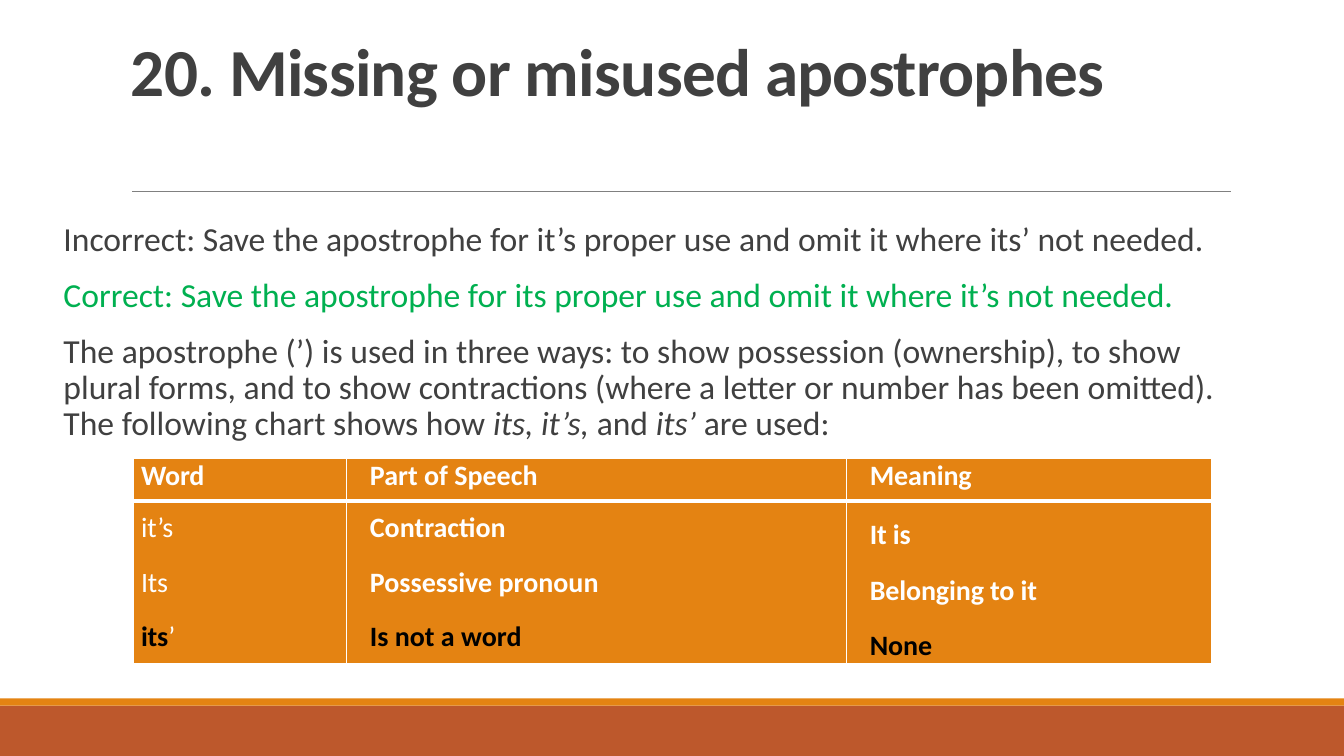
from lxml import etree
from pptx import Presentation
from pptx.dml.color import RGBColor
from pptx.enum.shapes import MSO_CONNECTOR, MSO_SHAPE
from pptx.enum.text import MSO_ANCHOR
from pptx.oxml.ns import qn
from pptx.util import Pt

RECT, STRAIGHT, TOP = MSO_SHAPE.RECTANGLE, MSO_CONNECTOR.STRAIGHT, MSO_ANCHOR.TOP
GREY, GREEN, WHITE, BLACK = "404040", "00B050", "FFFFFF", "000000"
ORANGE, RUST, RULE = "E48312", "BD582C", "808080"
W, H = 960, 540

TITLE = "20. Missing or misused apostrophes"
BODY = [
    [("Incorrect: Save the apostrophe for it’s proper use and omit it where its’ not needed.", GREY, False)],
    [("Correct: Save the apostrophe for its proper use and omit it where it’s not needed.", GREEN, False)],
    [("The apostrophe (’) is used in three ways: to show possession (ownership), to show plural forms, "
      "and to show contractions (where a letter or number has been omitted). "
      "The following chart shows how ", GREY, False),
     ("its, it’s, ", GREY, True), ("and ", GREY, False),
     ("its’ ", GREY, True), ("are used:", GREY, False)],
]
HEADINGS = ["Word", "Part of Speech", "Meaning"]
WORDS = [
    [[("it’s", WHITE, False)], [("Its", WHITE, False)], [("its", BLACK, True), ("’", WHITE, False)]],
    [[("Contraction", WHITE, True)], [("Possessive pronoun", WHITE, True)], [("Is not a word", BLACK, True)]],
    [[("It is", WHITE, True)], [("Belonging to it", WHITE, True)], [("None", BLACK, True)]],
]
COL_WIDTHS, ROW_HEIGHTS = [152.64, 357.12, 260.64], [30.24, 116]
INDENTS, LINE_SPACING, GAPS = [5.76, 16.56, 16.56], [1.3, 1.3, 1.5], [7, 7, 2.8]
SPACINGS = [-0.2, 0, -0.1]


def color(value):
    return RGBColor.from_string(value)


def add_run(p, text, fill, spacing=0, **formats):
    r = p.add_run()
    r.text = text
    for name, value in {"name": "Calibri", **formats}.items():
        setattr(r.font, name, value)
    r.font.color.rgb = color(fill)
    if spacing:
        r._r.get_or_add_rPr().set("spc", str(round(spacing * 100)))


def format_paragraph(p, indent=0, **formats):
    for name, value in formats.items():
        setattr(p, name, value)
    if indent:
        p._p.get_or_add_pPr().set("marL", str(Pt(indent)))


def paragraphs(tf, items):
    for i, item in enumerate(items):
        yield i, tf.add_paragraph() if i else tf.paragraphs[0], item


def set_margins(target, left, top, right, bottom):
    for side, value in zip(("left", "top", "right", "bottom"), (left, top, right, bottom)):
        setattr(target, "margin_" + side, Pt(value))


def add_text_box(s, box, margins):
    tf = s.shapes.add_textbox(*map(Pt, box)).text_frame
    tf.word_wrap, tf.vertical_anchor = True, TOP
    set_margins(tf, *margins)
    return tf


def add_bar(s, top, height, fill):
    sp = s.shapes.add_shape(RECT, 0, Pt(top), Pt(W), Pt(height))
    sp.shadow.inherit = False
    sp.fill.solid()
    sp.fill.fore_color.rgb = color(fill)
    sp.line.fill.background()


def style_cell(cell, widths):
    set_margins(cell, 0, 0, 0, 0)
    cell.vertical_anchor = TOP
    tcPr = cell._tc.get_or_add_tcPr()
    for side, width in zip("LRTB", widths):
        ln = etree.SubElement(tcPr, qn("a:ln" + side), w=str(Pt(width)))
        fill = etree.SubElement(ln, qn("a:solidFill"))
        etree.SubElement(fill, qn("a:srgbClr"), val=WHITE)
    cell.fill.solid()
    cell.fill.fore_color.rgb = color(ORANGE)


def add_word_table(s):
    shape = s.shapes.add_table(2, 3, Pt(95.04), Pt(327.6), Pt(sum(COL_WIDTHS)), Pt(sum(ROW_HEIGHTS)))
    table = shape.table
    for row, height in zip(table.rows, ROW_HEIGHTS):
        row.height = Pt(height)
    for c, width in enumerate(COL_WIDTHS):
        table.columns[c].width = Pt(width)
        head, cell = table.cell(0, c), table.cell(1, c)
        style_cell(head, (1, 1, 1, 3))
        style_cell(cell, (1, 1, 3, 1))
        p = head.text_frame.paragraphs[0]
        format_paragraph(p, INDENTS[c])
        add_run(p, HEADINGS[c], WHITE, SPACINGS[c], size=Pt(20), bold=True)
        for i, p, runs in paragraphs(cell.text_frame, WORDS[c]):
            format_paragraph(p, INDENTS[c], line_spacing=LINE_SPACING[c],
                             space_before=Pt(GAPS[c] if i else 0))
            for text, fill, bold in runs:
                add_run(p, text, fill, SPACINGS[c], size=Pt(20), bold=bold)


def main():
    prs = Presentation()
    prs.slide_width, prs.slide_height = Pt(W), Pt(H)
    s = prs.slides.add_slide(prs.slide_layouts[6])

    add_bar(s, 504, 36, RUST)
    add_bar(s, 498.96, 5.04, ORANGE)
    rule = s.shapes.add_connector(STRAIGHT, Pt(94.32), Pt(136.8), Pt(879.12), Pt(136.8))
    rule.line.color.rgb, rule.line.width = color(RULE), Pt(0.5)
    etree.SubElement(rule._element.spPr, qn("a:effectLst"))

    tf = add_text_box(s, (86.4, 22.32, 792, 114.48), (7.2, 7.2, 7.2, 3.6))
    p = tf.paragraphs[0]
    format_paragraph(p, line_spacing=0.85)
    add_run(p, TITLE, GREY, -0.5, size=Pt(48), bold=True)

    tf = add_text_box(s, (38.16, 155.52, 840.24, 343.44), (0, 3.6, 0, 3.6))
    for i, p, runs in paragraphs(tf, BODY):
        format_paragraph(p, 7.2, line_spacing=0.9, space_before=Pt(12 if i else 0), space_after=Pt(2))
        for text, fill, italic in runs:
            add_run(p, text, fill, size=Pt(24), italic=italic)

    add_word_table(s)
    prs.save("out.pptx")


if __name__ == "__main__":
    main()
